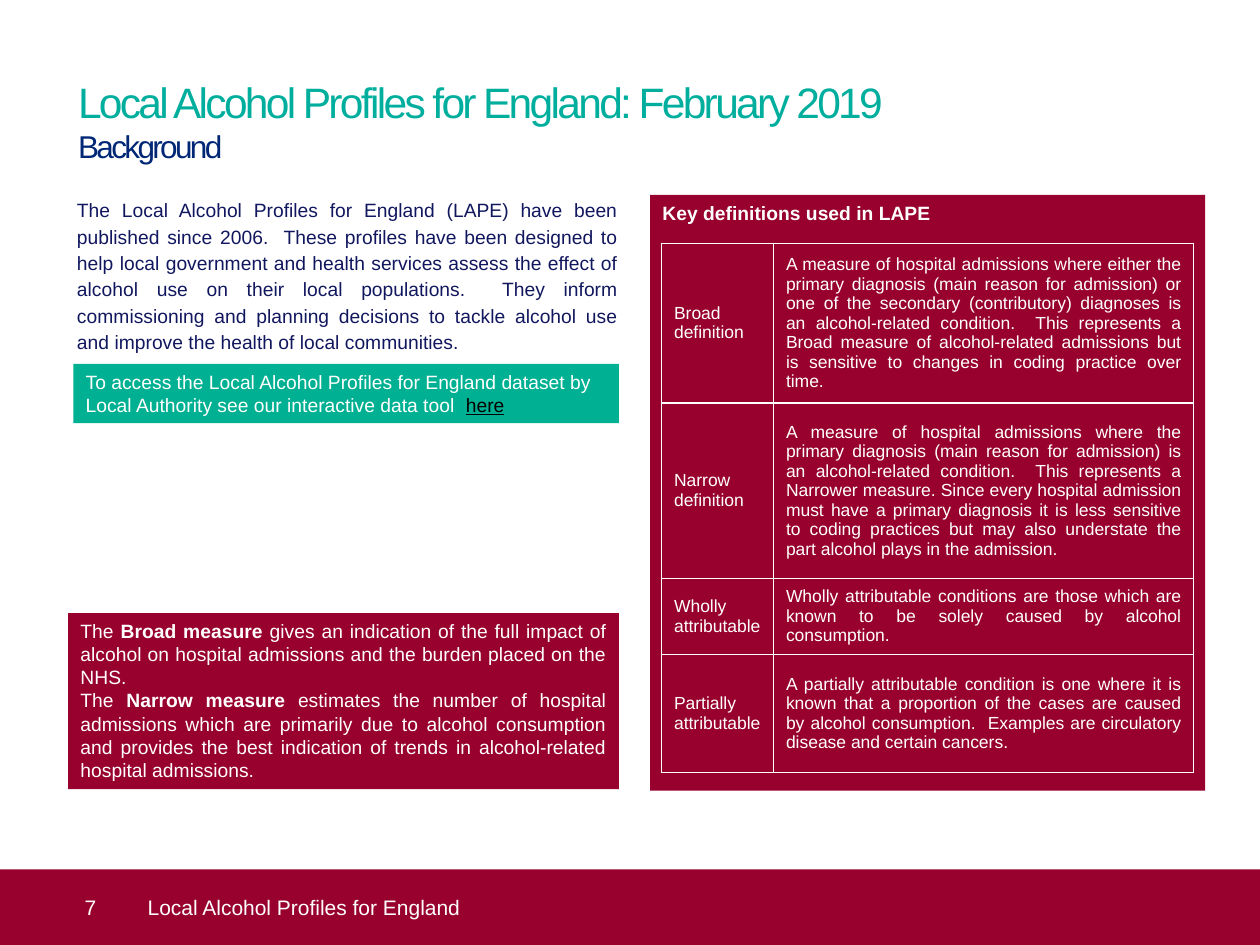
from dataclasses import dataclass

from lxml import etree
from pptx import Presentation
from pptx import util as u
from pptx.dml.color import RGBColor
from pptx.enum import shapes, text
from pptx.oxml.ns import qn
from pptx.slide import Slide

TEAL = RGBColor(0x00, 0xAE, 0x9E)
GREEN = RGBColor(0x00, 0xB0, 0x92)
BLUE = RGBColor(0x00, 0x27, 0x76)
NAVY = RGBColor(0x11, 0x17, 0x5E)
CRIMSON = RGBColor(0x98, 0x00, 0x2E)
WHITE = RGBColor(0xFF, 0xFF, 0xFF)
BLACK = RGBColor(0x00, 0x00, 0x00)

LEFT, JUSTIFY = text.PP_ALIGN.LEFT, text.PP_ALIGN.JUSTIFY
TOP, MIDDLE = text.MSO_ANCHOR.TOP, text.MSO_ANCHOR.MIDDLE

DEFINITIONS = [
    ("Broad definition",
     "A measure of hospital admissions where either the primary diagnosis (main reason for "
     "admission) or one of the secondary (contributory) diagnoses is an alcohol-related "
     "condition.  This represents a Broad measure of alcohol-related admissions but is "
     "sensitive to changes in coding practice over time."),
    ("Narrow definition",
     "A measure of hospital admissions where the primary diagnosis (main reason for admission) "
     "is an alcohol-related condition.  This represents a Narrower measure. Since every hospital "
     "admission must have a primary diagnosis it is less sensitive to coding practices but may "
     "also understate the part alcohol plays in the admission."),
    ("Wholly attributable",
     "Wholly attributable conditions are those which are known to be solely caused by alcohol "
     "consumption."),
    ("Partially attributable",
     "A partially attributable condition is one where it is known that a proportion of the cases "
     "are caused by alcohol consumption.  Examples are circulatory disease and certain cancers."),
]


@dataclass
class Page:
    slide: Slide
    font: str = "Arial"
    size: float = 11

    def place(self, shape, left, top, width, height):
        shape.left, shape.top = u.Pt(left), u.Pt(top)
        shape.width, shape.height = u.Pt(width), u.Pt(height)

    def frame(self, shape, anchor=TOP, inset=True):
        frame = shape.text_frame
        frame.word_wrap = True
        frame.auto_size = text.MSO_AUTO_SIZE.NONE
        frame.vertical_anchor = anchor
        if not inset:
            frame.margin_left = frame.margin_right = 0
            frame.margin_top = frame.margin_bottom = 0
        return frame

    def style(self, para, size, color, align=LEFT):
        para.alignment = align
        para.font.name, para.font.size = self.font, u.Pt(size)
        para.font.color.rgb = color

    def title(self, area, lines):
        """Write (words, size, colour) lines into the title placeholder."""
        shape = self.slide.shapes.title
        self.place(shape, *area)
        para = self.frame(shape, inset=False).paragraphs[0]
        para.alignment = LEFT
        para.font.name = self.font
        for number, (words, size, color) in enumerate(lines):
            if number:
                para.add_line_break()
            span = para.add_run()
            span.text = words
            span.font.size, span.font.color.rgb = u.Pt(size), color
            span._r.get_or_add_rPr().set("spc", "-150")

    def body(self, area, words):
        shape = self.slide.placeholders[1]
        self.place(shape, *area)
        para = self.frame(shape, inset=False).paragraphs[0]
        para.text = words
        para.line_spacing, para.space_before = 1.14, u.Pt(0)
        props = para._p.get_or_add_pPr()
        props.set("marL", "0")
        props.set("indent", "0")
        etree.SubElement(props, qn("a:buNone"))
        self.style(para, self.size, NAVY, JUSTIFY)

    def panel(self, area, fill, paragraphs=(), align=LEFT):
        """Draw a filled box; each paragraph is a list of (words, look) spans."""
        box = self.slide.shapes.add_shape(
            shapes.MSO_SHAPE.RECTANGLE, *[u.Pt(length) for length in area])
        box.shadow.inherit = False
        box.fill.solid()
        box.fill.fore_color.rgb = fill
        box.line.fill.background()
        frame = self.frame(box)
        for number, spans in enumerate(paragraphs):
            para = frame.add_paragraph() if number else frame.paragraphs[0]
            self.style(para, self.size, WHITE, align)
            for words, look in spans:
                span = para.add_run()
                span.text = words
                if look == "bold":
                    span.font.bold = True
                elif look == "link":
                    span.font.underline = True
                    span.font.color.rgb = BLACK

    def label(self, area, words, size):
        box = self.slide.shapes.add_textbox(*[u.Pt(length) for length in area])
        para = self.frame(box, MIDDLE, inset=False).paragraphs[0]
        para.text = words
        self.style(para, size, WHITE)

    def border(self, cell):
        props = cell._tc.get_or_add_tcPr()
        for side in ("lnL", "lnR", "lnT", "lnB"):
            line = etree.SubElement(props, qn(f"a:{side}"), w=str(u.Pt(1)))
            fill = etree.SubElement(line, qn("a:solidFill"))
            etree.SubElement(fill, qn("a:srgbClr"), val=str(WHITE))

    def table(self, left, top, widths, heights, rows, size):
        table = self.slide.shapes.add_table(
            len(rows), len(widths), u.Pt(left), u.Pt(top),
            u.Pt(sum(widths)), u.Pt(sum(heights))).table
        table.first_row = table.horz_banding = False
        for column, width in zip(table.columns, widths):
            column.width = u.Pt(width)
        for row, height, entries in zip(table.rows, heights, rows):
            row.height = u.Pt(height)
            for cell, words in zip(row.cells, entries):
                cell.text = words
                cell.vertical_anchor = MIDDLE
                self.border(cell)
                cell.fill.background()
                self.style(cell.text_frame.paragraphs[0], size, WHITE, JUSTIFY)


def main():
    deck = Presentation()
    deck.slide_width, deck.slide_height = u.Pt(720), u.Pt(540)
    page = Page(deck.slides.add_slide(deck.slide_layouts[1]))

    page.title((44.6, 43.2, 632, 51), [
        ("Local Alcohol Profiles for England: February 2019", 24.3, TEAL),
        ("Background", 18, BLUE)])
    page.body((44, 111.6, 309.2, 373),
              "The Local Alcohol Profiles for England (LAPE) have been published since 2006.  "
              "These profiles have been designed to help local government and health services "
              "assess the effect of alcohol use on their local populations.  They inform "
              "commissioning and planning decisions to tackle alcohol use and improve the health "
              "of local communities.")

    page.panel((0, 496.8, 720, 43.2), CRIMSON)
    page.label((48.4, 496.8, 30, 43.2), "7", 12)
    page.label((84.4, 496.8, 620, 43.2), "Local Alcohol Profiles for England", 12)

    page.panel((371.5, 111.4, 317.2, 340.4), CRIMSON,
               [[("Key definitions used in LAPE", "bold")]])
    page.table(378, 139, (64, 240), (91.3, 100.3, 43.3, 67.7), DEFINITIONS, 10)

    page.panel((41.9, 208, 311.8, 33.9), GREEN, [[
        ("To access the Local Alcohol Profiles for England dataset by Local Authority see our "
         "interactive data tool  ", None),
        ("here", "link")]])
    page.panel((38.9, 350.4, 314.8, 100.6), CRIMSON, [
        [("The ", None), ("Broad measure ", "bold"),
         ("gives an indication of the full impact of alcohol on hospital admissions and the "
          "burden placed on the NHS.", None)],
        [("The ", None), ("Narrow measure ", "bold"),
         ("estimates the number of hospital admissions which are primarily due to alcohol "
          "consumption and provides the best indication of trends in alcohol-related hospital "
          "admissions.", None)]], JUSTIFY)

    deck.save("out.pptx")


if __name__ == "__main__":
    main()
